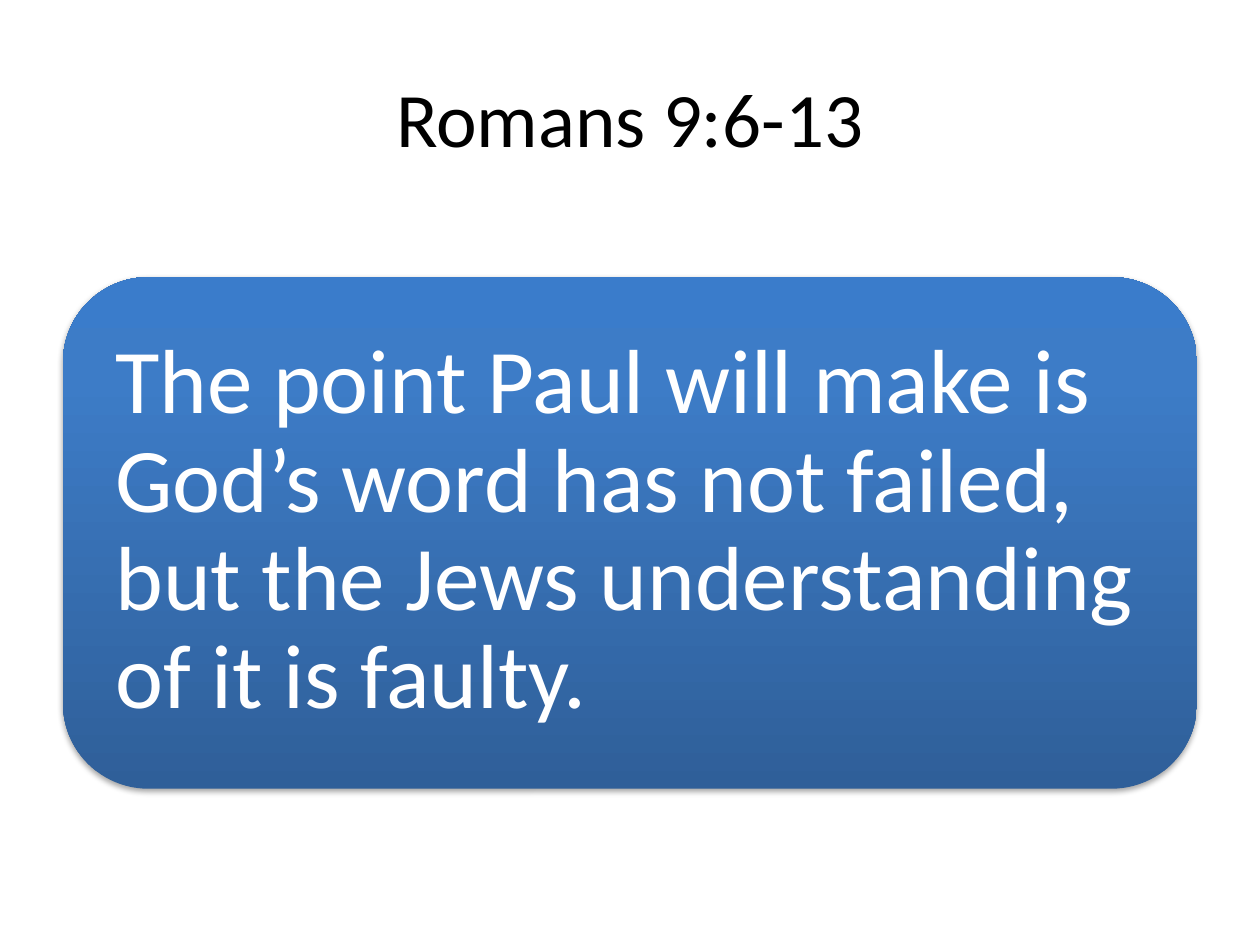
import pptx
import pptx.dml.color
import pptx.enum.shapes
import pptx.enum.text
import pptx.oxml
import pptx.oxml.ns
import pptx.util

Pt = pptx.util.Pt
RGBColor = pptx.dml.color.RGBColor

BLACK = RGBColor(0x00, 0x00, 0x00)
WHITE = RGBColor(0xFF, 0xFF, 0xFF)
DARK_BLUE = RGBColor(0x2F, 0x5F, 0x99)
MID_BLUE = RGBColor(0x3D, 0x7C, 0xC7)
LIGHT_BLUE = RGBColor(0x3A, 0x7C, 0xCB)
PANEL_STOPS = [(0, DARK_BLUE), (80, MID_BLUE), (100, LIGHT_BLUE)]
FONT = "Calibri"


def place(s, left, top, width, height):
    s.left, s.top, s.width, s.height = Pt(left), Pt(top), Pt(width), Pt(height)


def write_text(s, text, size, color, align):
    tf = s.text_frame
    tf.word_wrap = True
    tf.vertical_anchor = pptx.enum.text.MSO_ANCHOR.MIDDLE
    p = tf.paragraphs[0]
    p.text = text
    p.alignment = align
    p.font.name = FONT
    p.font.size = Pt(size)
    p.font.color.rgb = color
    return tf


def add_title(slide, text):
    s = slide.shapes.title
    place(s, 36, 21.6, 648, 90)
    write_text(s, text, 44, BLACK, pptx.enum.text.PP_ALIGN.CENTER)


def parse_element(xml):
    return pptx.oxml.parse_xml(xml.format(ns=pptx.oxml.ns.nsdecls("a")))


def set_gradient(s, stops):
    s.fill.gradient()
    s.fill.gradient_angle = 90
    gs_list = s.fill._fill._gradFill.find(pptx.oxml.ns.qn("a:gsLst"))
    for gs in list(gs_list):
        gs_list.remove(gs)
    for percent, color in stops:
        gs_list.append(parse_element(
            f'<a:gs {{ns}} pos="{percent * 1000}"><a:srgbClr val="{color}"/></a:gs>'))


def set_shadow(s, blur, distance, opacity):
    s.shadow.inherit = False
    effects = s.element.spPr.find(pptx.oxml.ns.qn("a:effectLst"))
    effects.append(parse_element(
        f'<a:outerShdw {{ns}} blurRad="{Pt(blur)}" dist="{Pt(distance)}" '
        f'dir="5400000" rotWithShape="0"><a:srgbClr val="{BLACK}">'
        f'<a:alpha val="{opacity * 1000}"/></a:srgbClr></a:outerShdw>'))


def add_panel(slide, left, top, width, height):
    s = slide.shapes.add_shape(
        pptx.enum.shapes.MSO_SHAPE.ROUNDED_RECTANGLE,
        Pt(left), Pt(top), Pt(width), Pt(height))
    set_gradient(s, PANEL_STOPS)
    s.line.fill.background()
    set_shadow(s, 3.1, 1.8, 35)


def add_statement(slide, text, left, top, width, height):
    s = slide.shapes.add_textbox(Pt(left), Pt(top), Pt(width), Pt(height))
    tf = write_text(s, text, 52, WHITE, pptx.enum.text.PP_ALIGN.LEFT)
    tf.margin_left = tf.margin_right = tf.margin_top = tf.margin_bottom = Pt(15.6)
    tf.paragraphs[0].line_spacing = 0.9


def main():
    prs = pptx.Presentation()
    prs.slide_width, prs.slide_height = Pt(720), Pt(540)
    slide = prs.slides.add_slide(prs.slide_layouts.get_by_name("Title Only"))
    add_title(slide, "Romans 9:6-13")
    add_panel(slide, 36, 158.4, 648, 292.3)
    add_statement(
        slide,
        "The point Paul will make is God’s word has not failed, "
        "but the Jews understanding of it is faulty.",
        50.3, 172.1, 619.4, 263.5)
    prs.save("out.pptx")


if __name__ == "__main__":
    main()
